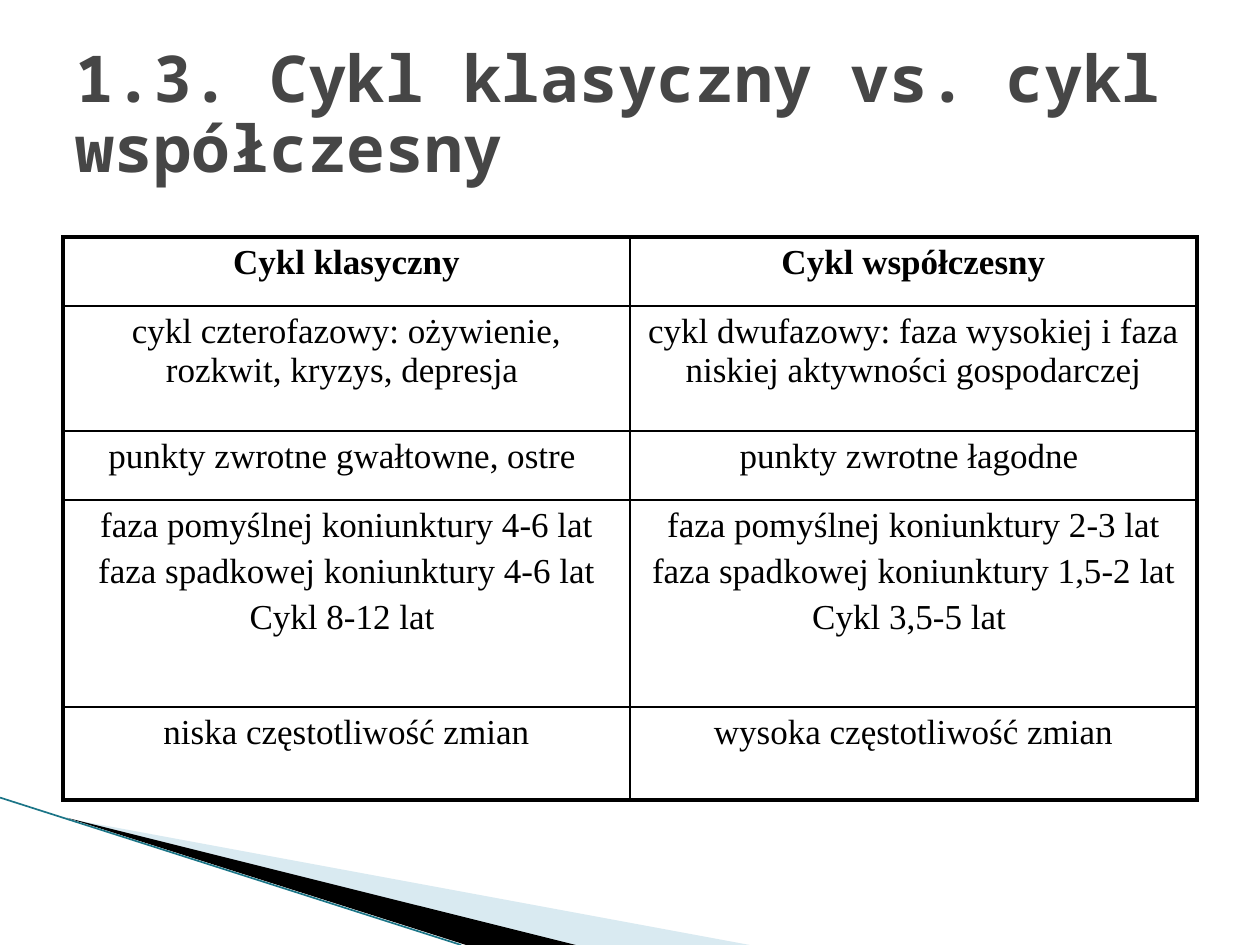
from dataclasses import dataclass

from lxml.etree import SubElement
from pptx import Presentation
from pptx.dml.color import RGBColor
from pptx.enum.text import MSO_ANCHOR, MSO_AUTO_SIZE, PP_ALIGN
from pptx.oxml.ns import qn
from pptx.util import Inches, Pt


@dataclass(frozen=True)
class Theme:
    title_font: str = "Noto Sans Mono"
    table_font: str = "Times New Roman"
    title_size: float = 36.9
    table_size: float = 20
    title_color: str = "464646"
    ink: str = "000000"
    pale_blue: str = "A0CBDC"
    teal: str = "1B7587"
    thick: float = 2.25
    thin: float = 1


theme = Theme()


def add_wedge(page, points, color, opacity=100):
    corners = [(Inches(x), Inches(y)) for x, y in points]
    builder = page.shapes.build_freeform(*corners[0], scale=1.0)
    builder.add_line_segments(corners[1:], close=True)
    wedge = builder.convert_to_shape()
    wedge.shadow.inherit = False
    wedge.line.fill.background()
    wedge.fill.solid()
    wedge.fill.fore_color.rgb = RGBColor.from_string(color)
    if opacity < 100:
        color_element = wedge.fill._xPr.find(f".//{qn('a:srgbClr')}")
        SubElement(color_element, qn("a:alpha"), val=str(opacity * 1000))


def set_borders(cell, widths):
    """Draw the cell's borders; widths are left, right, top, bottom in points."""
    properties = cell._tc.get_or_add_tcPr()
    for position, (side, width) in enumerate(zip("LRTB", widths)):
        line = SubElement(properties, qn(f"a:ln{side}"), w=str(Pt(width)))
        fill = SubElement(line, qn("a:solidFill"))
        SubElement(fill, qn("a:srgbClr"), val=theme.ink)
        properties.insert(position, line)


deck = Presentation()
deck.slide_width, deck.slide_height = Inches(10), Inches(7.5)
page = deck.slides.add_slide(deck.slide_layouts[5])

# Corner decoration
add_wedge(page, [(0.55, 6.5), (5.95, 7.5), (4.56, 7.5)], theme.pale_blue, opacity=40)
add_wedge(page, [(0.53, 6.49), (4.57, 7.5), (3.7, 7.5)], theme.ink)
edge = page.shapes.add_connector(1, Inches(0), Inches(6.33), Inches(3.66), Inches(7.5))
edge.line.color.rgb = RGBColor.from_string(theme.teal)
edge.line.width = Pt(0.95)
SubElement(edge._element.spPr, qn("a:effectLst"))

# Title
title = page.shapes.title
title.left, title.top, title.width, title.height = map(Inches, (0.5, 0.3, 9, 1.25))
frame = title.text_frame
frame.text = "1.3. Cykl klasyczny vs. cykl współczesny"
frame.word_wrap = True
frame.auto_size = MSO_AUTO_SIZE.NONE
frame.vertical_anchor = MSO_ANCHOR.MIDDLE
heading = frame.paragraphs[0]
heading.alignment = PP_ALIGN.LEFT
heading.line_spacing = 0.9
font = heading.runs[0].font
font.name, font.size, font.bold = theme.title_font, Pt(theme.title_size), True
font.color.rgb = RGBColor.from_string(theme.title_color)

# Comparison table
rows = [
    ("Cykl klasyczny", "Cykl współczesny"),
    ("cykl czterofazowy: ożywienie, rozkwit, kryzys, depresja ",
     "cykl dwufazowy: faza wysokiej i faza niskiej aktywności gospodarczej"),
    ("punkty zwrotne gwałtowne, ostre ", "punkty zwrotne łagodne "),
    ("faza pomyślnej koniunktury 4-6 lat\nfaza spadkowej koniunktury 4-6 lat\nCykl 8-12 lat ",
     "faza pomyślnej koniunktury 2-3 lat\nfaza spadkowej koniunktury 1,5-2 lat\nCykl 3,5-5 lat "),
    ("niska częstotliwość zmian", "wysoka częstotliwość zmian"),
]
row_heights = [0.55, 0.99, 0.55, 1.64, 0.74]
table = page.shapes.add_table(
    len(rows), 2, Inches(0.5), Inches(1.88), Inches(9), Inches(sum(row_heights))
).table
table.horz_banding = False

for row_index, (texts, height) in enumerate(zip(rows, row_heights)):
    table.rows[row_index].height = Inches(height)
    for column_index, text in enumerate(texts):
        cell = table.cell(row_index, column_index)
        cell.fill.background()
        outer_sides = (column_index == 0, column_index == 1,
                       row_index == 0, row_index == len(rows) - 1)
        set_borders(cell, [theme.thick if outer else theme.thin for outer in outer_sides])
        cell.text_frame.text = text
        for para_index, para in enumerate(cell.text_frame.paragraphs):
            para.alignment = PP_ALIGN.CENTER
            if para_index:
                para.space_before = Pt(0.2 * theme.table_size)
            font = para.runs[0].font
            font.name, font.size = theme.table_font, Pt(theme.table_size)
            font.bold = row_index == 0
            font.color.rgb = RGBColor.from_string(theme.ink)

deck.save("out.pptx")
